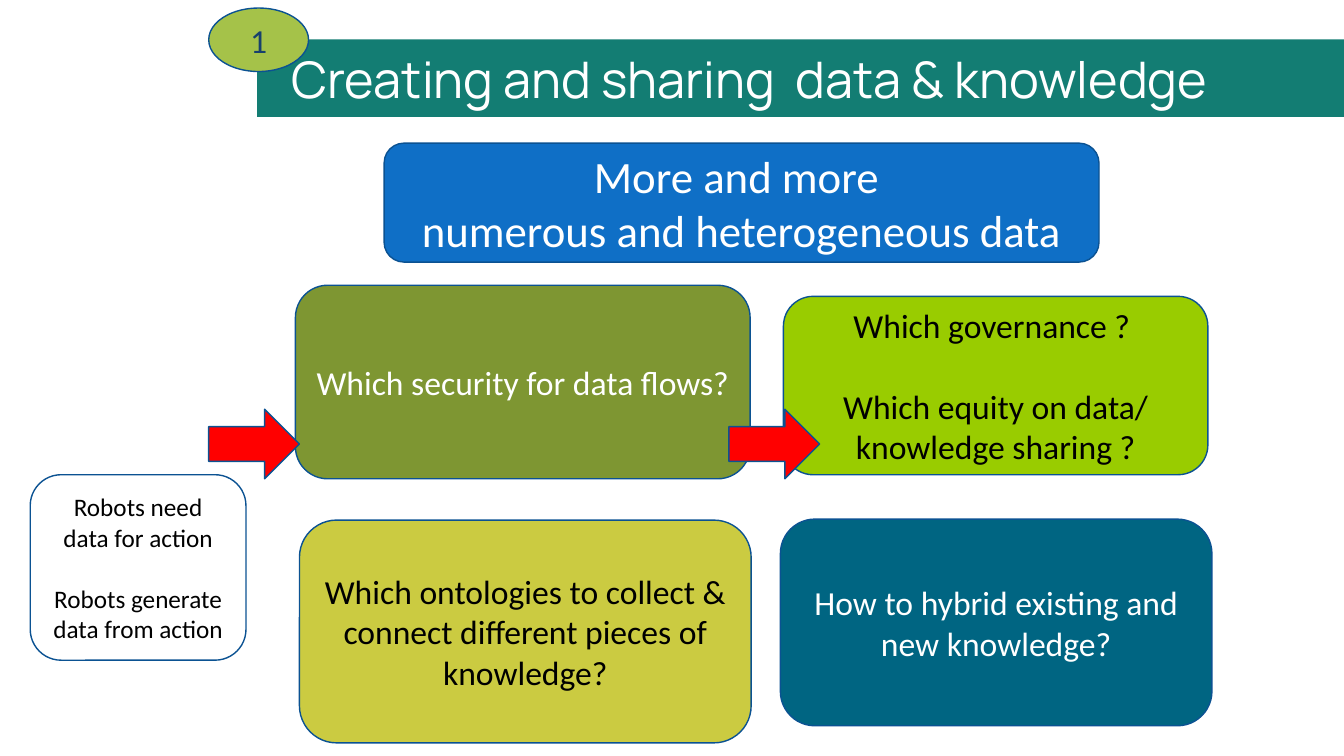
from pptx import Presentation
from pptx import util as u
from pptx.dml import color
from pptx.enum import shapes, text

Inches, Pt = u.Inches, u.Pt
KIND = shapes.MSO_SHAPE
OUTLINE = "0B5292"

TITLE = "Creating and sharing  data & knowledge"
BANNER = (2.55, 0.39, 10.78, 0.77)
TITLE_BOX = (2.79, 0.5, 10.21, 0.43)

BOXES = [
    ((3.81, 1.42, 7.09, 1.18), "0F6FC6", "FFFFFF", 32, 0,
     ["More and more ", "numerous and heterogeneous data"]),
    ((7.77, 2.94, 4.21, 1.77), "99CC00", "000000", 24, 29.3,
     ["Which governance ? ", "Which equity on data/ knowledge sharing ?"]),
    ((2.93, 2.83, 4.51, 1.92), "7E9632", "FFFFFF", 24, 0,
     ["Which security for data flows?"]),
    ((7.74, 5.15, 4.28, 2.05), "006582", "FFFFFF", 24, 0,
     ["How to hybrid existing and new knowledge?"]),
    ((2.97, 5.16, 4.48, 2.21), "CBCB41", "000000", 24, 0,
     ["Which ontologies to collect & connect different pieces of knowledge?"]),
    ((0.3, 4.71, 2.14, 1.84), None, "000000", 18, 22,
     ["Robots need data for action", "Robots generate data from action"]),
]
NUMBER_BADGE = ((2.07, 0.08, 0.99, 0.63), "A5C249", "17406D", 24, 0, ["1"])
ARROW_LEFTS = [2.07, 7.23]
ARROW_TOP, ARROW_WIDTH, ARROW_HEIGHT = 4.06, 0.9, 0.69


def rgb(value):
    return color.RGBColor.from_string(value)


def add_figure(slide, kind, place, fill, line=OUTLINE):
    shape = slide.shapes.add_shape(kind, *map(Inches, place))
    shape.shadow.inherit = False
    if fill:
        shape.fill.solid()
        shape.fill.fore_color.rgb = rgb(fill)
    else:
        shape.fill.background()
    if line:
        shape.line.color.rgb = rgb(line)
        shape.line.width = Pt(1)
    else:
        shape.line.fill.background()
    return shape


def write_run(paragraph, words, font_name, size, ink):
    run = paragraph.add_run()
    run.text = words
    run.font.name = font_name
    run.font.size = Pt(size)
    run.font.color.rgb = rgb(ink)


def add_labelled(slide, kind, place, fill, ink, size, gap, lines):
    frame = add_figure(slide, kind, place, fill).text_frame
    frame.word_wrap = True
    frame.vertical_anchor = text.MSO_ANCHOR.MIDDLE
    for index, words in enumerate(lines):
        paragraph = frame.add_paragraph() if index else frame.paragraphs[0]
        paragraph.alignment = text.PP_ALIGN.CENTER
        if index and gap:
            paragraph.space_before = Pt(gap)
        write_run(paragraph, words, "Calibri", size, ink)


def add_title(slide):
    add_figure(slide, KIND.RECTANGLE, BANNER, "137D73", None)
    frame = slide.shapes.add_textbox(*map(Inches, TITLE_BOX)).text_frame
    frame.word_wrap = True
    paragraph = frame.paragraphs[0]
    paragraph.line_spacing = 0.9
    write_run(paragraph, TITLE, "Manrope", 36, "FFFFFF")


def main():
    presentation = Presentation()
    presentation.slide_width = Inches(13.33)
    presentation.slide_height = Inches(7.5)
    slide = presentation.slides.add_slide(presentation.slide_layouts[6])
    add_title(slide)
    for box in BOXES:
        add_labelled(slide, KIND.ROUNDED_RECTANGLE, *box)
    add_labelled(slide, KIND.OVAL, *NUMBER_BADGE)
    for left in ARROW_LEFTS:
        place = (left, ARROW_TOP, ARROW_WIDTH, ARROW_HEIGHT)
        add_figure(slide, KIND.RIGHT_ARROW, place, "FF0000")
    presentation.save("out.pptx")


if __name__ == "__main__":
    main()
